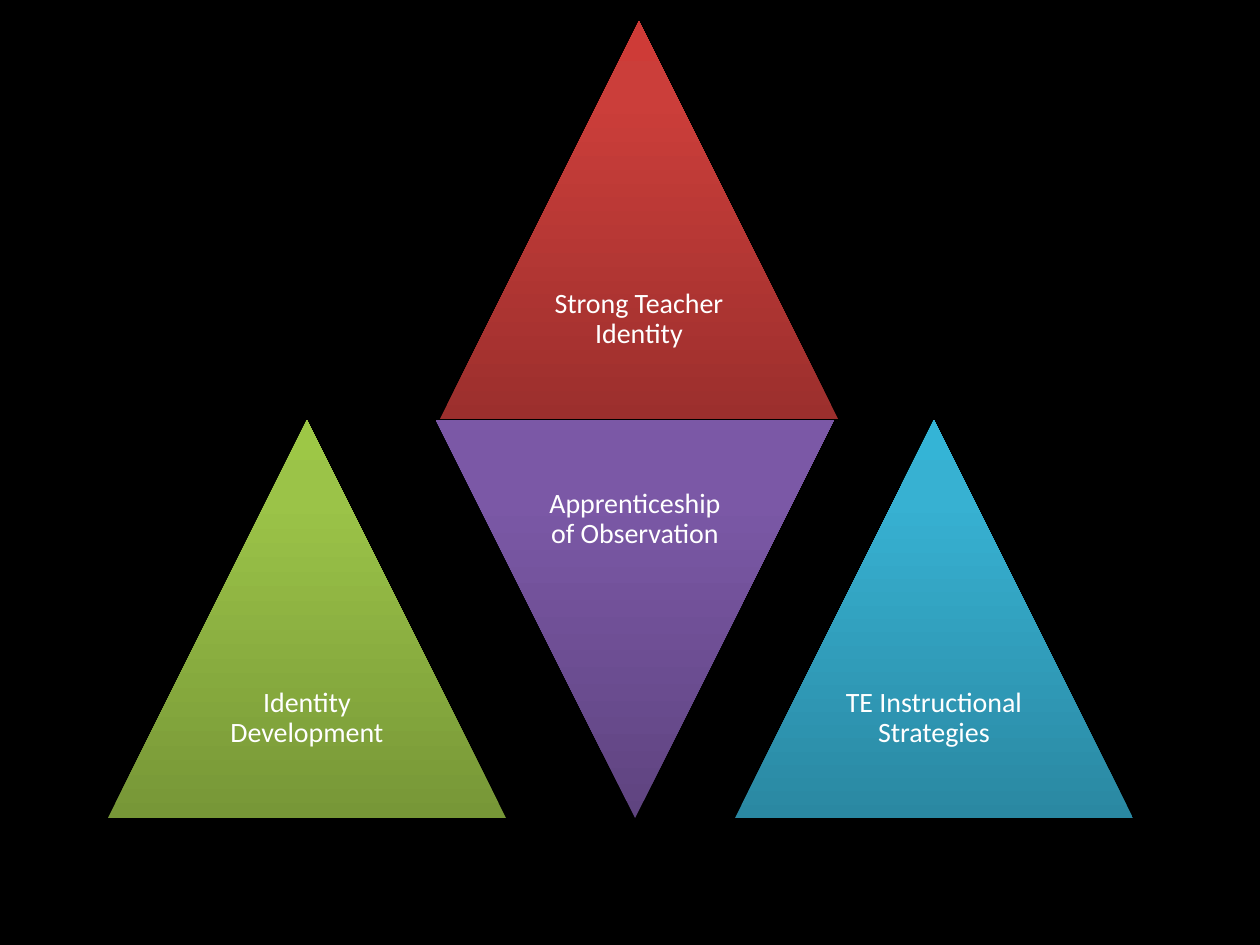
import dataclasses

import lxml.etree
import pptx
import pptx.dml.color
import pptx.enum.shapes
import pptx.enum.text
import pptx.oxml
import pptx.oxml.ns
import pptx.shapes.group
import pptx.util

PX = 914400 / 126  # EMU in one px
WIDE, HIGH = 1260, 945
SIDE = 398  # width and height of each triangle
INSET = 9


@dataclasses.dataclass(frozen=True)
class Theme:
    back: str = "000000"
    text: str = "FFFFFF"
    font: str = "Calibri"
    size: float = 16
    red: tuple[str, ...] = ("9C2F2D", "CB3E3A", "CE3B37")
    green: tuple[str, ...] = ("779737", "9BC348", "9DC746")
    purple: tuple[str, ...] = ("5F4480", "7B58A6", "7C57A8")
    blue: tuple[str, ...] = ("2A88A2", "37B1D2", "34B4D6")


@dataclasses.dataclass(frozen=True)
class Part:
    text: str
    left: int
    top: int
    tones: tuple[str, ...]
    turned: bool = False


THEME = Theme()
PARTS = [
    Part("Strong Teacher Identity", 440, 21, THEME.red),
    Part("Identity Development", 108, 420, THEME.green),
    Part("Apprenticeship of Observation", 436, 420, THEME.purple, True),
    Part("TE Instructional Strategies", 735, 420, THEME.blue),
]


def emu(px: float) -> int:
    return round(px * PX)


def rgb(tone: str) -> pptx.dml.color.RGBColor:
    return pptx.dml.color.RGBColor.from_string(tone)


def style(item: object, form: dict[str, object]) -> None:
    for name, value in form.items():
        setattr(item, name, value)


def node(body: str) -> lxml.etree._Element:
    return pptx.oxml.parse_xml(body.replace(">", f" {pptx.oxml.ns.nsdecls('a')}>", 1))


def triangle(group: pptx.shapes.group.GroupShape, part: Part) -> None:
    kind = pptx.enum.shapes.MSO_SHAPE.ISOSCELES_TRIANGLE
    shape = group.shapes.add_shape(
        kind, emu(part.left), emu(part.top), emu(SIDE), emu(SIDE))
    shape.rotation = 180 if part.turned else 0
    shape.line.fill.background()

    # The gradient stays upright when the shape is turned
    stops = "".join(
        f'<a:gs pos="{spot * 1000}"><a:srgbClr val="{tone}"/></a:gs>'
        for spot, tone in zip((0, 80, 100), part.tones))
    props = shape._element.spPr
    props.find(pptx.oxml.ns.qn("a:ln")).addprevious(node(
        f'<a:gradFill rotWithShape="0"><a:gsLst>{stops}</a:gsLst>'
        '<a:lin ang="16200000" scaled="0"/></a:gradFill>'))

    # Soft drop shadow
    props.append(node(
        '<a:effectLst><a:outerShdw blurRad="40000" dist="23000" dir="5400000"'
        ' rotWithShape="0"><a:srgbClr val="000000"><a:alpha val="35000"/>'
        '</a:srgbClr></a:outerShdw></a:effectLst>'))


def label(group: pptx.shapes.group.GroupShape, part: Part) -> None:
    # The text sits in the half of the triangle next to its base
    top = part.top + (0 if part.turned else SIDE // 2)
    box = group.shapes.add_textbox(
        emu(part.left + SIDE / 4), emu(top), emu(SIDE / 2), emu(SIDE / 2))
    frame = box.text_frame
    edges = ("left", "top", "right", "bottom")
    style(frame, {f"margin_{edge}": emu(INSET) for edge in edges})
    style(frame, {
        "word_wrap": True,
        "vertical_anchor": pptx.enum.text.MSO_ANCHOR.MIDDLE,
    })
    para = frame.paragraphs[0]
    style(para, {
        "alignment": pptx.enum.text.PP_ALIGN.CENTER,
        "line_spacing": 0.9,
        "space_after": pptx.util.Pt(THEME.size * 0.35),
    })
    run = para.add_run()
    run.text = part.text
    style(run.font, {"name": THEME.font, "size": pptx.util.Pt(THEME.size)})
    run.font.color.rgb = rgb(THEME.text)


def main() -> None:
    deck = pptx.Presentation()
    style(deck, {"slide_width": emu(WIDE), "slide_height": emu(HIGH)})
    slide = deck.slides.add_slide(deck.slide_layouts[6])

    # Background
    fill = slide.background.fill
    fill.solid()
    fill.fore_color.rgb = rgb(THEME.back)

    # Pyramid of four triangles
    group = slide.shapes.add_group_shape()
    for part in PARTS:
        triangle(group, part)
        label(group, part)

    deck.save("out.pptx")


if __name__ == "__main__":
    main()
